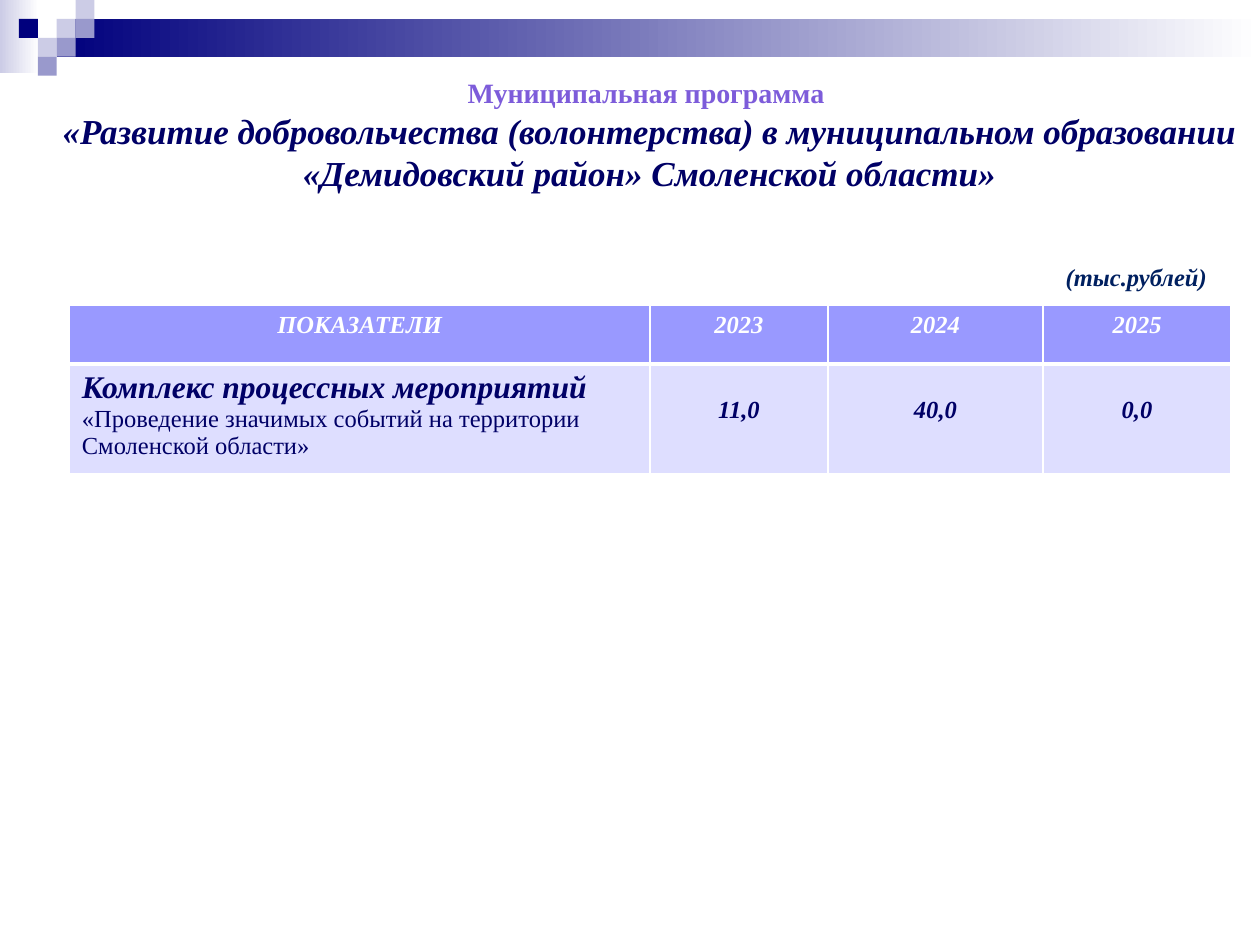
from lxml import etree
from pptx import Presentation
from pptx.dml import color
from pptx.enum import shapes, text
from pptx.oxml import ns
from pptx.util import Inches, Pt

FONT = "Times New Roman"
NAVY, LILAC, VIOLET = "00007D", "CCCCE6", "9999CC"
WHITE, INK = "FFFFFF", "000066"


def rgb(value):
    return color.RGBColor.from_string(value)


def add_run(paragraph, words, size, ink, bold=True, italic=True):
    run = paragraph.add_run()
    run.text = words
    run.font.name = FONT
    run.font.size = Pt(size)
    run.font.bold = bold
    run.font.italic = italic
    run.font.color.rgb = rgb(ink)


def add_block(slide, left, top, width, height, start, end=None):
    """Rectangle with a plain fill, or a left-to-right gradient if end is given."""
    shape = slide.shapes.add_shape(
        shapes.MSO_SHAPE.RECTANGLE,
        Inches(left), Inches(top), Inches(width), Inches(height))
    shape.shadow.inherit = False
    shape.line.fill.background()
    if end is None:
        shape.fill.solid()
        shape.fill.fore_color.rgb = rgb(start)
    else:
        shape.fill.gradient()
        shape.fill.gradient_angle = 0
        for stop, value in zip(shape.fill.gradient_stops, (start, end)):
            stop.color.rgb = rgb(value)


def add_banner(slide, left, top, width):
    add_block(slide, left, top, 0.31, 0.58, LILAC, WHITE)
    add_block(slide, left + 0.45, top + 0.15, width - 0.45, 0.3, NAVY, WHITE)
    # Small squares: column and row on a grid of equal steps
    step = 0.15
    squares = [(3, 1, LILAC), (4, 0, LILAC), (4, 1, VIOLET), (2, 2, LILAC),
               (1, 1, NAVY), (3, 2, VIOLET), (2, 3, VIOLET)]
    for column, row, fill in squares:
        add_block(slide, left + column * step, top + row * step, step, step, fill)


def add_text_frame(slide, left, top, width, height, wrap=True):
    box = slide.shapes.add_textbox(
        Inches(left), Inches(top), Inches(width), Inches(height))
    box.text_frame.word_wrap = wrap
    return box.text_frame


def add_title(slide, left, top, width, height):
    frame = add_text_frame(slide, left, top, width, height)
    heading = frame.paragraphs[0]
    add_run(heading, "Муниципальная программа ", 16, "7D5CDA", italic=False)
    name = frame.add_paragraph()
    add_run(name, "«Развитие добровольчества (волонтерства) в муниципальном "
                  "образовании «Демидовский район» Смоленской области»", 20, INK)
    for paragraph in (heading, name):
        paragraph.alignment = text.PP_ALIGN.CENTER


def add_unit_note(slide, left, top, width, height):
    frame = add_text_frame(slide, left, top, width, height, wrap=False)
    add_run(frame.paragraphs[0], "(тыс.рублей)", 14, "002060")


def style_cell(cell, fill, bottom_width):
    cell.fill.solid()
    cell.fill.fore_color.rgb = rgb(fill)
    # Borders come before the fill in the cell properties
    properties = cell._tc.get_or_add_tcPr()
    widths = {"a:lnL": 1, "a:lnR": 1, "a:lnT": 1, "a:lnB": bottom_width}
    for index, (tag, width) in enumerate(widths.items()):
        line = etree.Element(ns.qn(tag), w=str(Pt(width)))
        solid = etree.SubElement(line, ns.qn("a:solidFill"))
        etree.SubElement(solid, ns.qn("a:srgbClr"), val=WHITE)
        properties.insert(index, line)


def add_budget_table(slide, left, top, column_widths, row_heights):
    table = slide.shapes.add_table(
        len(row_heights), len(column_widths), Inches(left), Inches(top),
        Inches(sum(column_widths)), Inches(sum(row_heights))).table
    for column, width in zip(table.columns, column_widths):
        column.width = Inches(width)
    for row, height in zip(table.rows, row_heights):
        row.height = Inches(height)

    # Header row
    for index, label in enumerate(["ПОКАЗАТЕЛИ", "2023", "2024", "2025"]):
        cell = table.cell(0, index)
        style_cell(cell, "9999FF", 3)
        paragraph = cell.text_frame.paragraphs[0]
        paragraph.alignment = text.PP_ALIGN.CENTER
        add_run(paragraph, label, 14, WHITE)

    # Measure and its yearly amounts
    measure = table.cell(1, 0)
    style_cell(measure, "DEDEFF", 1)
    paragraph = measure.text_frame.paragraphs[0]
    add_run(paragraph, "Комплекс процессных мероприятий ", 18, INK)
    add_run(paragraph, "«Проведение значимых событий на территории "
                       "Смоленской области»", 14, INK, bold=False, italic=False)
    for index, amount in enumerate(["11,0", "40,0", "0,0"], start=1):
        cell = table.cell(1, index)
        style_cell(cell, "DEDEFF", 1)
        cell.margin_top = Inches(0.26)
        paragraph = cell.text_frame.paragraphs[0]
        paragraph.alignment = text.PP_ALIGN.CENTER
        add_run(paragraph, amount, 14, INK)


def main():
    presentation = Presentation()
    presentation.slide_width = Inches(10)
    presentation.slide_height = Inches(7.5)
    slide = presentation.slides.add_slide(presentation.slide_layouts[6])
    add_banner(slide, 0, 0, 10)
    add_title(slide, 0.31, 0.55, 9.69, 1.04)
    add_budget_table(slide, 0.55, 2.42, [4.61, 1.41, 1.71, 1.49], [0.47, 0.86])
    add_unit_note(slide, 8.36, 2.03, 1.33, 0.34)
    presentation.save("out.pptx")


if __name__ == "__main__":
    main()
